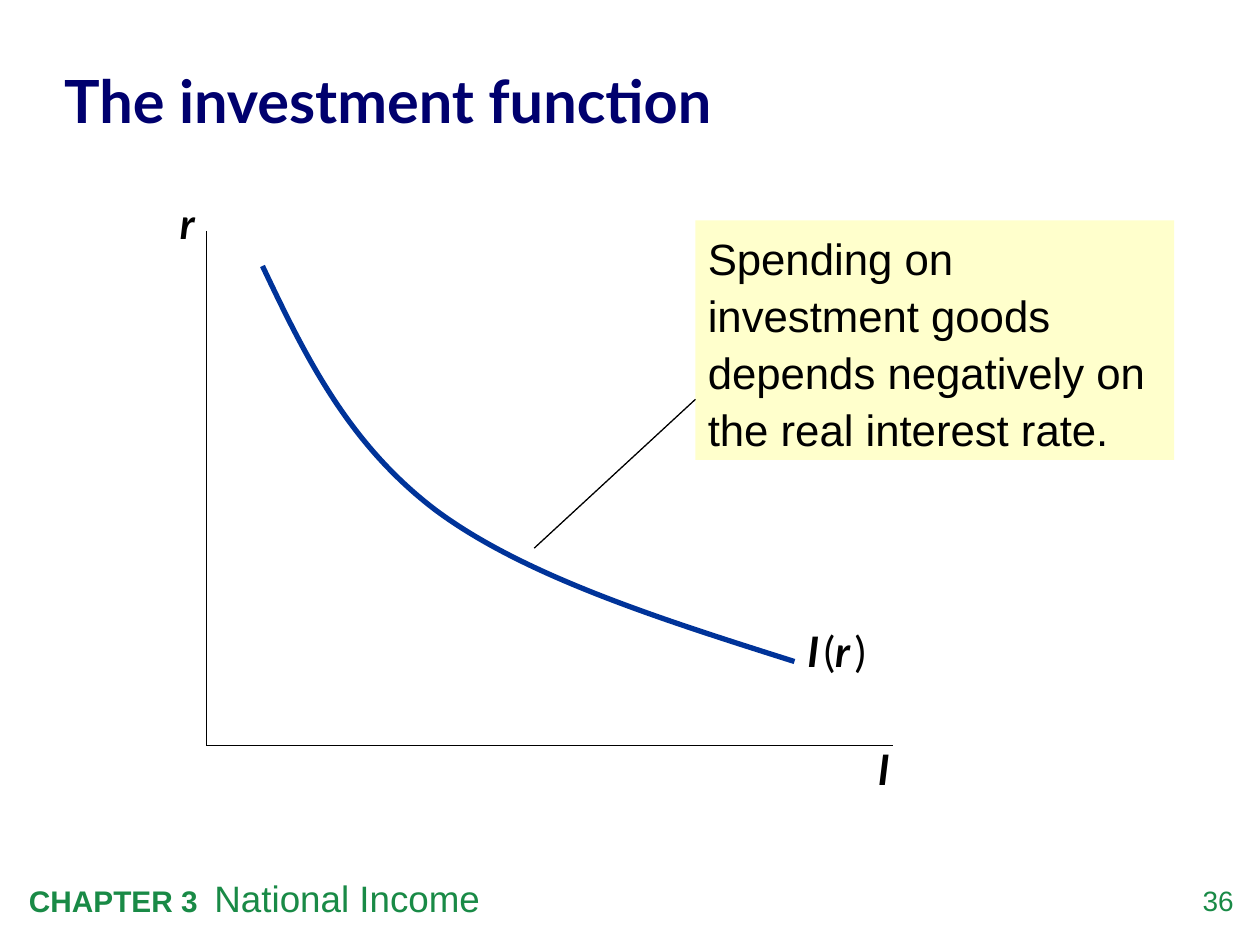
from lxml.etree import SubElement
from pptx import Presentation
from pptx.dml.color import RGBColor
from pptx.enum.shapes import MSO_CONNECTOR, MSO_SHAPE
from pptx.enum.text import MSO_ANCHOR, PP_ALIGN
from pptx.oxml.ns import qn
from pptx.util import Pt

BLACK, GREEN, NAVY, BLUE, CREAM = "000000", "198A46", "00006E", "003399", "FFFFCC"
ORIGIN = (118, 426)
LABEL = {"size": 24, "name": "Lato", "bold": True, "italic": True}


def color(hex_string):
    return RGBColor.from_string(hex_string)


def set_font(font, size=None, name=None, hex_color=None, bold=None, italic=None):
    if size:
        font.size = Pt(size)
    if name:
        font.name = name
    if hex_color:
        font.color.rgb = color(hex_color)
    font.bold, font.italic = bold, italic


def fill_text(shape, runs, align=PP_ALIGN.LEFT, anchor=MSO_ANCHOR.TOP,
              inset=True, line_spacing=None, **font):
    """Write one paragraph; runs is a list of (text, font overrides)."""
    frame = shape.text_frame
    frame.word_wrap = True
    frame.vertical_anchor = anchor
    if not inset:
        frame.margin_left = frame.margin_right = Pt(0)
        frame.margin_top = frame.margin_bottom = Pt(0)
    paragraph = frame.paragraphs[0]
    paragraph.alignment = align
    paragraph.line_spacing = line_spacing
    set_font(paragraph.font, **font)
    for text, overrides in runs:
        for index, line in enumerate(text.split("\n")):
            if index:
                paragraph.add_line_break()
            run = paragraph.add_run()
            run.text = line
            set_font(run.font, **overrides)


def add_text(slide, box, runs, **style):
    fill_text(slide.shapes.add_textbox(*map(Pt, box)), runs, **style)


def add_line(slide, start, end):
    line = slide.shapes.add_connector(MSO_CONNECTOR.STRAIGHT, *map(Pt, start + end))
    line.line.color.rgb = color(BLACK)
    line.line.width = Pt(0.75)
    SubElement(line._element.spPr, qn("a:effectLst"))


def add_curve(slide, start, *points):
    """Draw cubic Bezier segments, three points for each."""
    builder = slide.shapes.build_freeform(Pt(start[0]), Pt(start[1]))
    builder.add_line_segments([tuple(map(Pt, point)) for point in points], close=False)
    curve = builder.convert_to_shape()
    curve.shadow.inherit = False
    curve.fill.background()
    curve.line.color.rgb = color(BLUE)
    curve.line.width = Pt(3)
    segments = list(curve._element.iter(qn("a:lnTo")))
    outline = segments[0].getparent()
    for first in range(0, len(segments), 3):
        bezier = SubElement(outline, qn("a:cubicBezTo"))
        for segment in segments[first:first + 3]:
            bezier.append(segment[0])
            outline.remove(segment)


def add_callout(slide, box, text):
    callout = slide.shapes.add_shape(MSO_SHAPE.RECTANGLE, *map(Pt, box))
    callout.shadow.inherit = False
    callout.fill.solid()
    callout.fill.fore_color.rgb = color(CREAM)
    callout.line.fill.background()
    fill_text(callout, [(text, {})], line_spacing=1.09,
              size=25, name="Arial", hex_color=BLACK)


def add_footer(slide):
    add_text(slide, (665.3, 504.7, 39.6, 23), [("36", {})], align=PP_ALIGN.RIGHT,
             inset=False, size=16, name="Arial", hex_color=GREEN)
    add_text(slide, (9.4, 496.8, 589, 32.4),
             [("CHAPTER 3  ", {"size": 17, "bold": True}),
              ("National Income", {"size": 21})],
             name="Arial", hex_color=GREEN)


def add_axes(slide):
    add_line(slide, (ORIGIN[0], 132), ORIGIN)
    add_line(slide, ORIGIN, (510.5, ORIGIN[1]))
    for text, left, top in (("r", 90, 109.5), ("I", 488, 421.2)):
        add_text(slide, (left, top, 34, 36), [(text, {})],
                 align=PP_ALIGN.CENTER, hex_color=BLACK, **LABEL)


def add_investment_curve(slide):
    add_curve(slide, (150, 152), (174.2, 203), (198.7, 253.4), (249.1, 291.6),
              (299.5, 329), (376.6, 353.5), (454, 378))
    plain, gap = {"size": 24}, (" ", {"size": 12, "bold": True, "italic": True})
    letter = {"size": 24, "bold": True, "italic": True}
    add_text(slide, (454.3, 354.2, 62, 36),
             [("I", letter), gap, ("(", plain), ("r", letter), gap, (")", plain)],
             name="Lato", hex_color=BLACK)


def main():
    presentation = Presentation()
    presentation.slide_width, presentation.slide_height = Pt(720), Pt(540)
    slide = presentation.slides.add_slide(presentation.slide_layouts[6])
    add_footer(slide)
    add_text(slide, (36.7, 18.7, 649.4, 74.2), [("The investment function", {})],
             anchor=MSO_ANCHOR.MIDDLE, inset=False, line_spacing=1.05,
             size=34, name="Lato", hex_color=NAVY, bold=True)
    add_axes(slide)
    add_investment_curve(slide)
    add_callout(slide, (397.4, 126, 273.6, 136.8),
                "Spending on investment goods \n"
                "depends negatively on the real interest rate.")
    add_line(slide, (397.4, 228.2), (305.3, 313.2))
    presentation.save("out.pptx")


if __name__ == "__main__":
    main()
